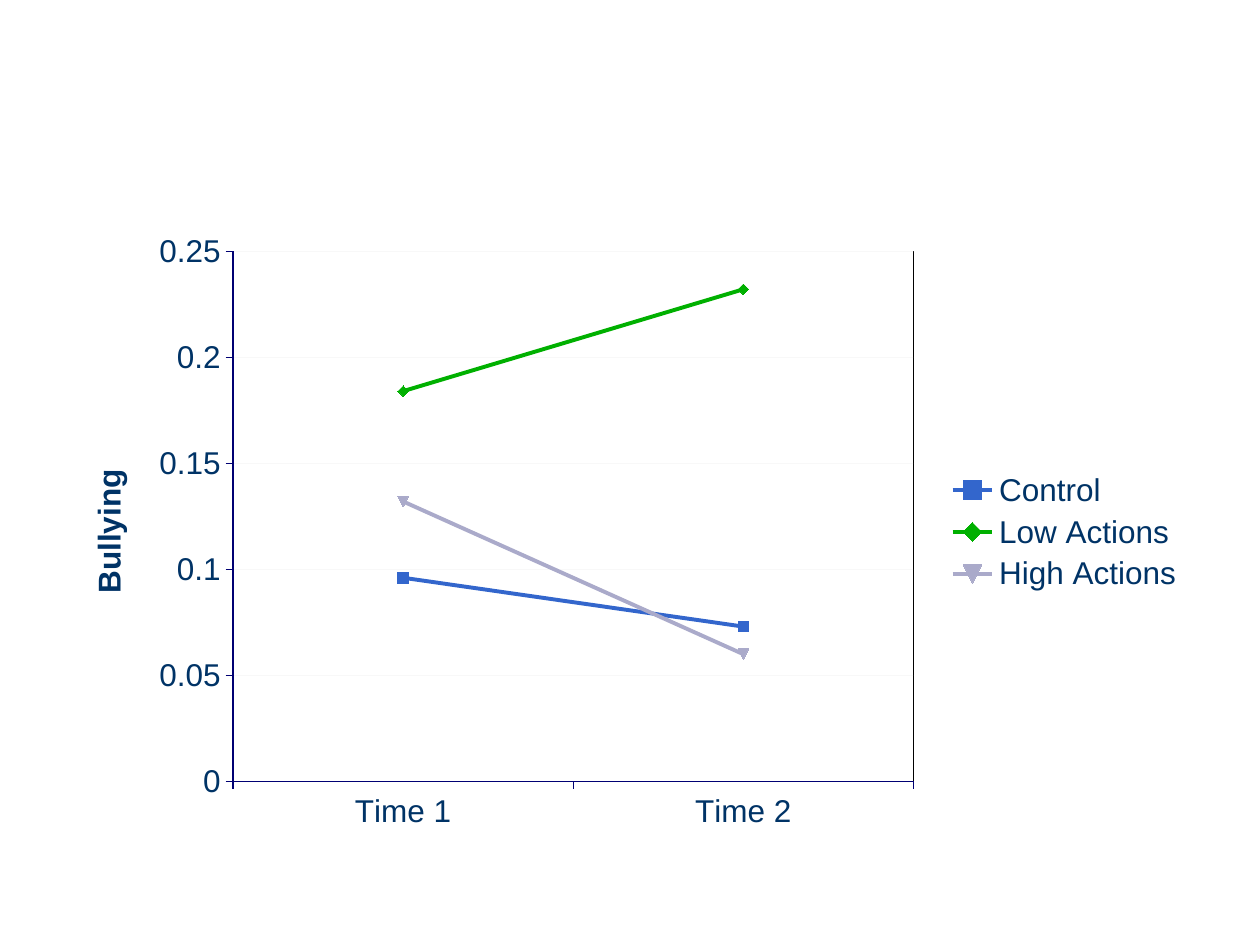
import pptx
import pptx.chart.data
import pptx.dml.color
import pptx.enum.chart
import pptx.oxml
import pptx.util

EMU_PER_PX = 914400 / 126
NAVY, AXIS, GRID, BLACK = "003366", "000073", "F8F8F8", "000000"
CATEGORIES = ["Time 1", "Time 2"]
SERIES = [
    ("Control", (0.096, 0.073), "3366CC"),
    ("Low Actions", (0.184, 0.232), "00B000"),
    ("High Actions", (0.132, 0.06), "AAAACA"),
]


def px(length):
    return pptx.util.Emu(round(length * EMU_PER_PX))


def rgb(value):
    return pptx.dml.color.RGBColor.from_string(value)


def set_all(target, values):
    for name, value in values.items():
        setattr(target, name, value)


class Page:
    def __init__(self, slide, font="Arial", size=18):
        self.slide = slide
        self.font = font
        self.size = size

    def style_text(self, font, color, bold=False):
        set_all(font, {"name": self.font, "size": pptx.util.Pt(self.size), "bold": bold})
        font.color.rgb = rgb(color)

    def style_line(self, line, color, width):
        line.color.rgb = rgb(color)
        line.width = pptx.util.Pt(width)

    def style_axis(self, axis, values):
        set_all(axis, values)
        self.style_text(axis.tick_labels.font, NAVY)
        self.style_line(axis.format.line, AXIS, 0.75)

    def style_plot_area(self, chart, bounds, color):
        """Place the inner plot area by chart fractions and outline it."""
        area = chart._chartSpace.chart.plotArea
        for old in area.xpath("c:layout"):
            area.remove(old)
        places = "".join(f'<c:{key} val="{value}"/>' for key, value in bounds.items())
        names = pptx.oxml.ns.nsdecls("c", "a")
        area.insert(0, pptx.oxml.parse_xml(
            f'<c:layout {names}><c:manualLayout><c:layoutTarget val="inner"/>'
            f'<c:xMode val="edge"/><c:yMode val="edge"/>{places}'
            '</c:manualLayout></c:layout>'))
        area.append(pptx.oxml.parse_xml(
            f'<c:spPr {names}><a:noFill/><a:ln w="9525"><a:solidFill>'
            f'<a:srgbClr val="{color}"/></a:solidFill></a:ln></c:spPr>'))

    def line_chart(self, left, top, width, height, categories, series, value_title):
        data = pptx.chart.data.CategoryChartData()
        data.categories = categories
        for name, values, _ in series:
            data.add_series(name, values)
        chart = self.slide.shapes.add_chart(
            pptx.enum.chart.XL_CHART_TYPE.LINE_MARKERS,
            px(left), px(top), px(width), px(height), data).chart
        set_all(chart, {"has_title": False, "has_legend": True})
        self.style_text(chart.font, NAVY)
        chart.plots[0].vary_by_categories = False

        for line, (_, _, color) in zip(chart.plots[0].series, series):
            line.smooth = False
            self.style_line(line.format.line, color, 2.25)
            line.marker.size = 6
            line.marker.format.fill.solid()
            line.marker.format.fill.fore_color.rgb = rgb(color)
            self.style_line(line.marker.format.line, color, 0.75)

        outside = {"major_tick_mark": pptx.enum.chart.XL_TICK_MARK.OUTSIDE}
        self.style_axis(chart.category_axis, outside)
        value_axis = chart.value_axis
        self.style_axis(value_axis, {
            **outside, "minimum_scale": 0, "maximum_scale": 0.25,
            "major_unit": 0.05, "has_major_gridlines": True, "has_title": True})
        value_axis.tick_labels.number_format = "General"
        value_axis.tick_labels.number_format_is_linked = False
        self.style_line(value_axis.major_gridlines.format.line, GRID, 0.75)
        para = value_axis.axis_title.text_frame.paragraphs[0]
        span = para.add_run()
        span.text = value_title
        self.style_text(span.font, NAVY, bold=True)

        set_all(chart.legend, {
            "position": pptx.enum.chart.XL_LEGEND_POSITION.RIGHT,
            "include_in_layout": False})
        self.style_text(chart.legend.font, NAVY)
        self.style_plot_area(chart, {"x": 0.15, "y": 0.05, "w": 0.6, "h": 0.85}, BLACK)


def main():
    deck = pptx.Presentation()
    set_all(deck, {"slide_width": px(1260), "slide_height": px(945)})
    page = Page(deck.slides.add_slide(deck.slide_layouts[6]))
    page.line_chart(63, 220, 1134, 624, CATEGORIES, SERIES, "Bullying")
    deck.save("out.pptx")


if __name__ == "__main__":
    main()
